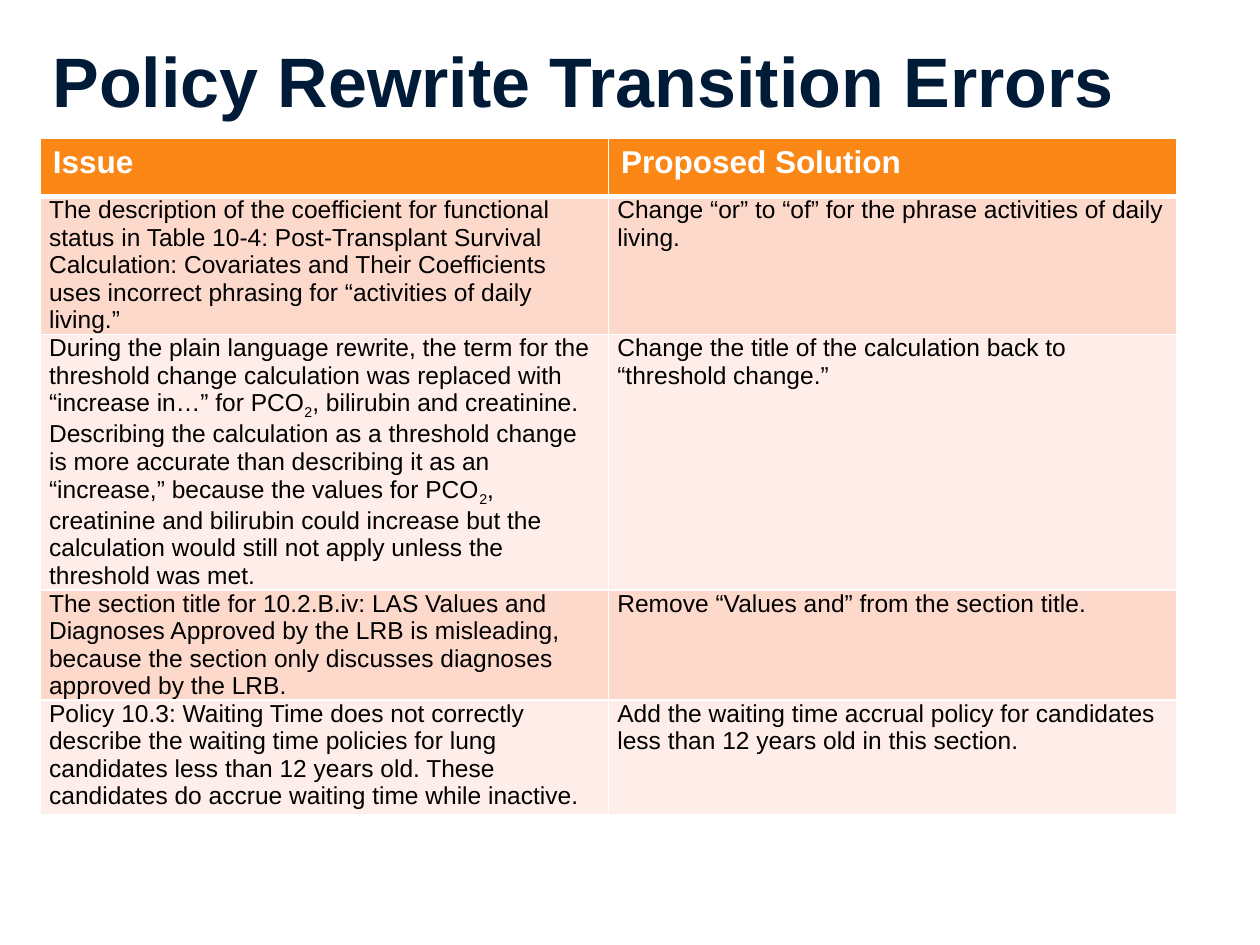
from lxml.etree import SubElement
from pptx import Presentation
from pptx.dml.color import RGBColor
from pptx.enum.text import MSO_ANCHOR
from pptx.oxml.ns import qn
from pptx.util import Inches, Pt

NAVY = "001B37"
ORANGE = "FA8716"
WHITE = "FFFFFF"
BLACK = "000000"
BANDS = ("FDD9CC", "FEEDE8")
LEFT = 0.32
COLUMN_WIDTH = 4.51
ROW_HEIGHTS = (0.46, 0.91, 1.81, 0.68, 0.91)
SUBSCRIPT_MARK = "|"

HEADINGS = ("Issue", "Proposed Solution")
ISSUES = (
    (
        "The description of the coefficient for functional status in Table 10-4: "
        "Post-Transplant Survival Calculation: Covariates and Their Coefficients "
        "uses incorrect phrasing for “activities of daily living.”",
        "Change “or” to “of” for the phrase activities of daily living.",
    ),
    (
        "During the plain language rewrite, the term for the threshold change "
        "calculation was replaced with “increase in…” for PCO|2|, bilirubin and "
        "creatinine. Describing the calculation as a threshold change is more "
        "accurate than describing it as an “increase,” because the values for "
        "PCO|2|, creatinine and bilirubin could increase but the calculation would "
        "still not apply unless the threshold was met.",
        "Change the title of the calculation back to “threshold change.”",
    ),
    (
        "The section title for 10.2.B.iv: LAS Values and Diagnoses Approved by the "
        "LRB is misleading, because the section only discusses diagnoses approved "
        "by the LRB.",
        "Remove “Values and” from the section title.",
    ),
    (
        "Policy 10.3: Waiting Time does not correctly describe the waiting time "
        "policies for lung candidates less than 12 years old. These candidates do "
        "accrue waiting time while inactive.",
        "Add the waiting time accrual policy for candidates less than 12 years old "
        "in this section.",
    ),
)


def color(value):
    return RGBColor.from_string(value)


def write_text(text_frame, text, size=14, fill=BLACK, bold=False):
    paragraph = text_frame.paragraphs[0]
    for index, part in enumerate(text.split(SUBSCRIPT_MARK)):
        run = paragraph.add_run()
        run.text = part
        run.font.name = "Arial"
        run.font.size = Pt(size)
        run.font.bold = bold
        run.font.color.rgb = color(fill)
        if index % 2:
            run.font._element.set("baseline", "-25000")


def add_border(cell, side, width):
    properties = cell._tc.get_or_add_tcPr()
    line = SubElement(properties, qn(f"a:ln{side}"), w=str(Pt(width)))
    solid = SubElement(line, qn("a:solidFill"))
    SubElement(solid, qn("a:srgbClr"), val=WHITE)


def style_cell(cell, fill, bottom_width=1, top_width=1):
    for side, width in zip("LRTB", (1, 1, top_width, bottom_width)):
        add_border(cell, side, width)
    cell.fill.solid()
    cell.fill.fore_color.rgb = color(fill)


def add_title(slide, text):
    shape = slide.shapes.add_textbox(
        Inches(LEFT), Inches(0.17), Inches(9.56), Inches(0.93)
    )
    shape.text_frame.word_wrap = True
    shape.text_frame.vertical_anchor = MSO_ANCHOR.MIDDLE
    write_text(shape.text_frame, text, size=40, fill=NAVY, bold=True)


def add_issue_table(slide):
    shape = slide.shapes.add_table(
        len(ROW_HEIGHTS), len(HEADINGS), Inches(LEFT), Inches(1.1),
        Inches(COLUMN_WIDTH * len(HEADINGS)), Inches(sum(ROW_HEIGHTS)),
    )
    table = shape.table
    for column in table.columns:
        column.width = Inches(COLUMN_WIDTH)
    for row, height in zip(table.rows, ROW_HEIGHTS):
        row.height = Inches(height)
    for cell, heading in zip(table.rows[0].cells, HEADINGS):
        style_cell(cell, ORANGE, bottom_width=3)
        write_text(cell.text_frame, heading, size=18, fill=WHITE, bold=True)
    for row_index, texts in enumerate(ISSUES, start=1):
        for cell, text in zip(table.rows[row_index].cells, texts):
            cell.margin_left = cell.margin_right = Inches(0.07)
            cell.margin_top = cell.margin_bottom = 0
            style_cell(cell, BANDS[(row_index - 1) % 2],
                       top_width=3 if row_index == 1 else 1)
            write_text(cell.text_frame, text)


def main():
    presentation = Presentation()
    presentation.slide_width = Inches(10)
    presentation.slide_height = Inches(7.5)
    slide = presentation.slides.add_slide(presentation.slide_layouts[6])
    add_issue_table(slide)
    add_title(slide, "Policy Rewrite Transition Errors")
    presentation.save("out.pptx")


if __name__ == "__main__":
    main()
